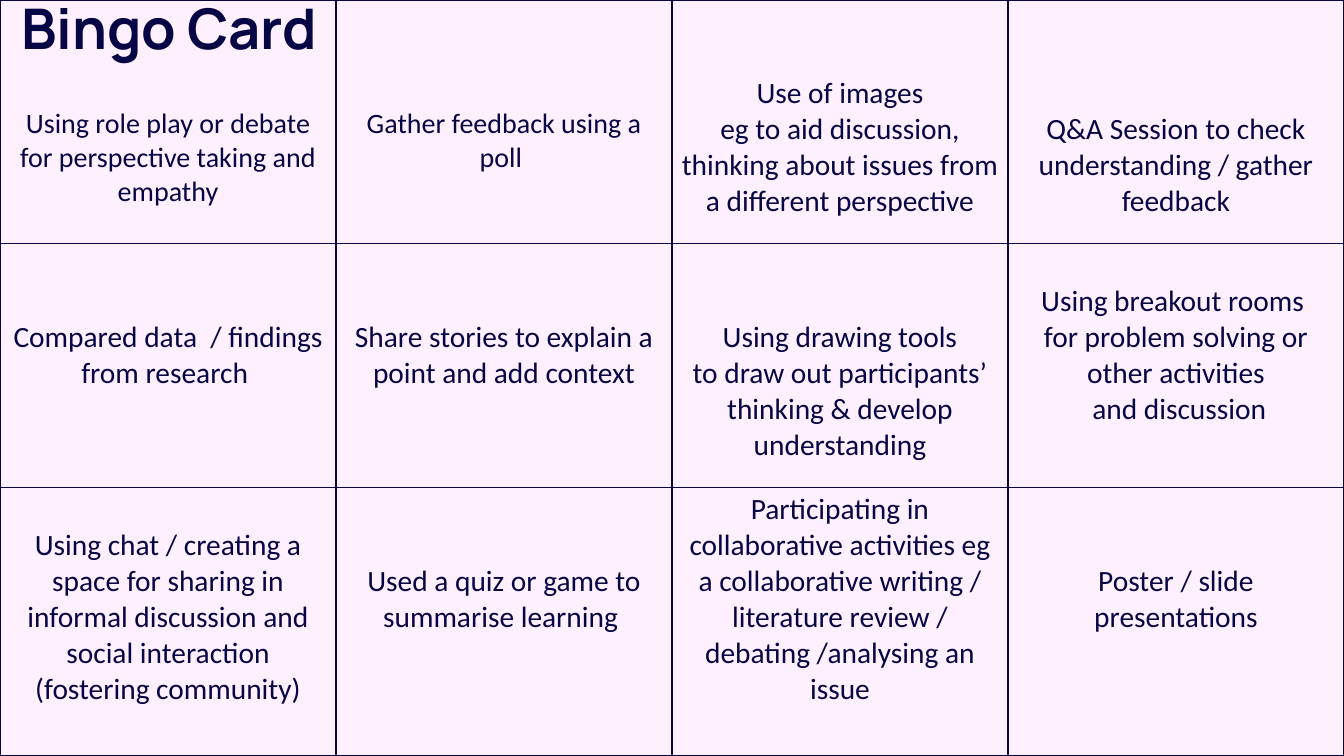
import pptx
import pptx.util
import pptx.dml.color
import pptx.enum.text
import pptx.oxml
import pptx.oxml.ns

Inches = pptx.util.Inches
Pt = pptx.util.Pt
RGBColor = pptx.dml.color.RGBColor
Align = pptx.enum.text.PP_ALIGN
Anchor = pptx.enum.text.MSO_ANCHOR

NAVY = RGBColor(0x06, 0x06, 0x45)
PINK = RGBColor(0xFF, 0xF0, 0xFF)
WIDTH, HEIGHT = 13.33, 7.5
ROWS = [2.42, 2.42, 2.66]
COLS = 4

CARD = [
    [
        (3, 20, "Using role play or debate for perspective taking and empathy"),
        (3, 20, "Gather feedback using a poll "),
        (2, 21, "Use of images\neg to aid discussion, thinking about issues from a different perspective"),
        (3, 21, "Q&A Session to check understanding / gather feedback"),
    ],
    [
        (2, 21, "Compared data  / findings from research "),
        (2, 21, "Share stories to explain a point and add context"),
        (2, 21, "Using drawing tools\nto draw out participants’ thinking & develop understanding"),
        (1, 21, "Using breakout rooms \nfor problem solving or other activities\n and discussion"),
    ],
    [
        (1, 21, "Using chat / creating a space for sharing in informal discussion and social interaction (fostering community)"),
        (2, 21, "Used a quiz or game to summarise learning "),
        (0, 21, "Participating in collaborative activities eg a collaborative writing / literature review / debating /analysing an issue"),
        (2, 21, "Poster / slide presentations"),
    ],
]


class Deck:
    body = "Calibri"
    head = "Manrope"
    pitch = 1.22

    def __init__(self):
        self.show = pptx.Presentation()
        self.show.slide_width = Inches(WIDTH)
        self.show.slide_height = Inches(HEIGHT)
        self.slide = self.show.slides.add_slide(self.show.slide_layouts[5])
        fill = self.slide.background.fill
        fill.solid()
        fill.fore_color.rgb = NAVY

    def font(self, para, name, size, bold=False):
        for run in para.runs:
            run.font.name = name
            run.font.size = Pt(size)
            run.font.bold = bold
            run.font.color.rgb = NAVY

    def title(self, text):
        box = self.slide.shapes.title
        box.left, box.top = Inches(0.11), Inches(0)
        box.width, box.height = Inches(3.32), Inches(0.82)
        frame = box.text_frame
        frame.text = text
        frame.word_wrap = True
        frame.auto_size = pptx.enum.text.MSO_AUTO_SIZE.NONE
        frame.vertical_anchor = Anchor.TOP
        frame.margin_top = Inches(0.01)
        para = frame.paragraphs[0]
        para.alignment = Align.LEFT
        para.line_spacing = 0.9
        self.font(para, self.head, 40, True)
        tree = box.element.getparent()
        tree.append(box.element)

    def edge(self, cell):
        props = cell._tc.get_or_add_tcPr()
        space = pptx.oxml.ns.nsdecls("a")
        for spot, side in enumerate(("lnL", "lnR", "lnT", "lnB")):
            line = pptx.oxml.parse_xml(
                f'<a:{side} {space} w="12700"><a:solidFill>'
                f'<a:srgbClr val="{NAVY}"/></a:solidFill></a:{side}>'
            )
            props.insert(spot, line)

    def cell(self, cell, drop, size, text):
        cell.fill.solid()
        cell.fill.fore_color.rgb = PINK
        cell.margin_left = cell.margin_right = Inches(0.09)
        cell.margin_top = Inches(0.04) + Pt(drop * size * self.pitch)
        cell.margin_bottom = Inches(0.04)
        cell.vertical_anchor = Anchor.TOP
        cell.text_frame.text = text
        for para in cell.text_frame.paragraphs:
            para.alignment = Align.CENTER
            self.font(para, self.body, size)
        self.edge(cell)

    def grid(self, card):
        frame = self.slide.shapes.add_table(
            len(ROWS), COLS, Inches(0), Inches(0), Inches(WIDTH), Inches(HEIGHT)
        )
        table = frame.table
        for col in table.columns:
            col.width = Inches(WIDTH / COLS)
        for row, tall, line in zip(table.rows, ROWS, card):
            row.height = Inches(tall)
            for cell, item in zip(row.cells, line):
                self.cell(cell, *item)


def main():
    deck = Deck()
    deck.grid(CARD)
    deck.title("Bingo Card")
    deck.show.save("out.pptx")


if __name__ == "__main__":
    main()
